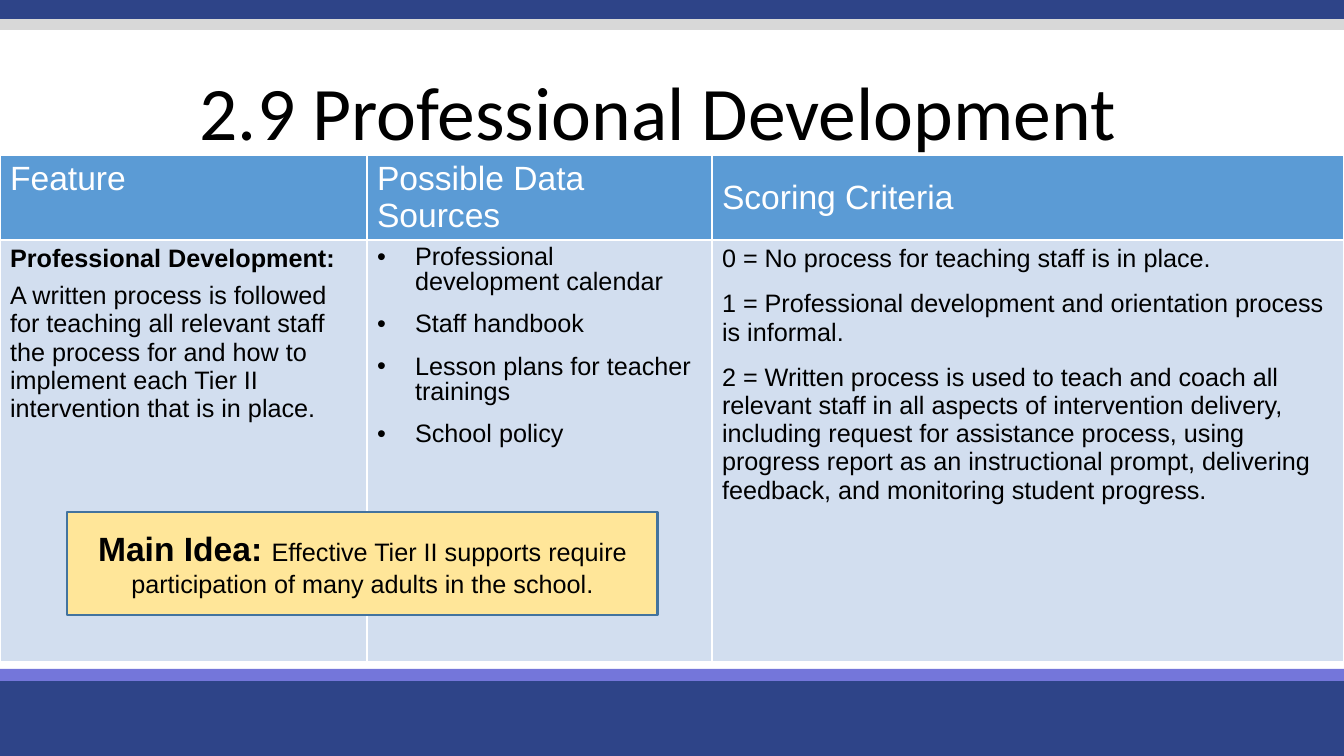
import lxml.etree
import pptx
import pptx.dml.color
import pptx.enum.shapes
import pptx.enum.text
import pptx.oxml.ns
import pptx.util

HUES = {
    "navy": "2E4488", "gray": "D8D8D8", "violet": "7476DA",
    "head": "5B9BD5", "cell": "D2DEEF", "note": "FFE699",
    "edge": "43739E", "white": "FFFFFF", "black": "000000",
}
ALIGN = pptx.enum.text.PP_ALIGN
ANCHOR = pptx.enum.text.MSO_ANCHOR


def px(n):
    return round(n * 914400 / 100.8)


def hue(name):
    return pptx.dml.color.RGBColor.from_string(HUES[name])


def node(parent, tag, **attrs):
    return lxml.etree.SubElement(parent, pptx.oxml.ns.qn(tag), attrs)


class Deck:
    face = "Arial"

    def __init__(self, width, height):
        self.show = pptx.Presentation()
        self.show.slide_width = px(width)
        self.show.slide_height = px(height)
        self.slide = self.show.slides.add_slide(self.show.slide_layouts[5])

    def style(self, run, size, color="black", bold=False, face=None):
        font = run.font
        font.name = face or self.face
        font.size = pptx.util.Pt(size)
        font.bold = bold
        font.color.rgb = hue(color)

    def rect(self, x, y, w, h, color, edge=None):
        kind = pptx.enum.shapes.MSO_SHAPE.RECTANGLE
        box = self.slide.shapes.add_shape(kind, px(x), px(y), px(w), px(h))
        box.shadow.inherit = False
        box.fill.solid()
        box.fill.fore_color.rgb = hue(color)
        if edge:
            box.line.color.rgb = hue(edge)
            box.line.width = pptx.util.Pt(2)
        else:
            box.line.fill.background()
        return box

    def title(self, text, x, y, w, h):
        box = self.slide.shapes.title
        box.left, box.top, box.width, box.height = map(px, (x, y, w, h))
        frame = box.text_frame
        frame.text = text
        frame.auto_size = pptx.enum.text.MSO_AUTO_SIZE.NONE
        frame.vertical_anchor = ANCHOR.MIDDLE
        para = frame.paragraphs[0]
        para.alignment = ALIGN.CENTER
        para.line_spacing = 0.9
        self.style(para.runs[0], 54, face="Calibri")

    def bullet(self, para):
        props = para._p.get_or_add_pPr()
        props.set("marL", str(px(38)))
        props.set("indent", str(px(-38)))
        tint = node(props, "a:buClr")
        node(tint, "a:srgbClr", val=HUES["black"])
        node(props, "a:buFont", typeface=self.face)
        node(props, "a:buChar", char="•")
        para.line_spacing = 0.9

    def cell(self, cell, lines, fill, size, color, gap=0, bullets=False):
        props = cell._tc.get_or_add_tcPr()
        for side in "LRTB":
            line = node(props, f"a:ln{side}", w=str(pptx.util.Pt(1)))
            paint = node(line, "a:solidFill")
            node(paint, "a:srgbClr", val=HUES["white"])
        cell.fill.solid()
        cell.fill.fore_color.rgb = hue(fill)
        frame = cell.text_frame
        frame.text = "\n".join(lines)
        for para in frame.paragraphs:
            if bullets:
                self.bullet(para)
            self.style(para.runs[0], size, color)
        for para in frame.paragraphs[:-1]:
            para.space_after = pptx.util.Pt(gap)

    def table(self, x, y, widths, heights):
        grid = self.slide.shapes.add_table(
            len(heights), len(widths), px(x), px(y),
            px(sum(widths)), px(sum(heights))).table
        for col, width in zip(grid.columns, widths):
            col.width = px(width)
        for row, height in zip(grid.rows, heights):
            row.height = px(height)
        return grid

    def note(self, x, y, w, h, parts):
        frame = self.rect(x, y, w, h, "note", "edge").text_frame
        frame.word_wrap = True
        frame.vertical_anchor = ANCHOR.MIDDLE
        para = frame.paragraphs[0]
        para.alignment = ALIGN.CENTER
        for text, size, bold in parts:
            run = para.add_run()
            run.text = text
            self.style(run, size, bold=bold)


def main():
    deck = Deck(1344, 756)
    bars = [(0, 19, "navy"), (19, 11, "gray"),
            (675, 81, "navy"), (669, 12, "violet")]
    for top, height, color in bars:
        deck.rect(0, top, 1344, height, color)
    deck.title("2.9 Professional Development", 128, 76, 1060, 80)

    heads = ["Feature", "Possible Data Sources", "Scoring Criteria"]
    bodies = [
        (["Professional Development:",
          "A written process is followed for teaching all relevant staff "
          "the process for and how to implement each Tier II intervention "
          "that is in place."], 6, False),
        (["Professional development calendar", "Staff handbook",
          "Lesson plans for teacher trainings", "School policy"], 12, True),
        (["0 = No process for teaching staff is in place.",
          "1 = Professional development and orientation process is informal.",
          "2 = Written process is used to teach and coach all relevant staff "
          "in all aspects of intervention delivery, including request for "
          "assistance process, using progress report as an instructional "
          "prompt, delivering feedback, and monitoring student progress."],
         12, False),
    ]
    grid = deck.table(0, 155, [367, 345, 632], [85, 422])
    for col, (head, body) in enumerate(zip(heads, bodies)):
        lines, gap, bullets = body
        top = grid.cell(0, col)
        deck.cell(top, [head], "head", 24, "white")
        top.vertical_anchor = ANCHOR.MIDDLE if col else ANCHOR.TOP
        deck.cell(grid.cell(1, col), lines, "cell", 18, "black", gap, bullets)
    lead = grid.cell(1, 0).text_frame.paragraphs[0]
    lead.runs[0].font.bold = True

    deck.note(67, 512, 591, 103, [
        ("Main Idea: ", 24, True),
        ("Effective Tier II supports require participation of many adults "
         "in the school.", 18, False)])
    deck.show.save("out.pptx")


if __name__ == "__main__":
    main()
